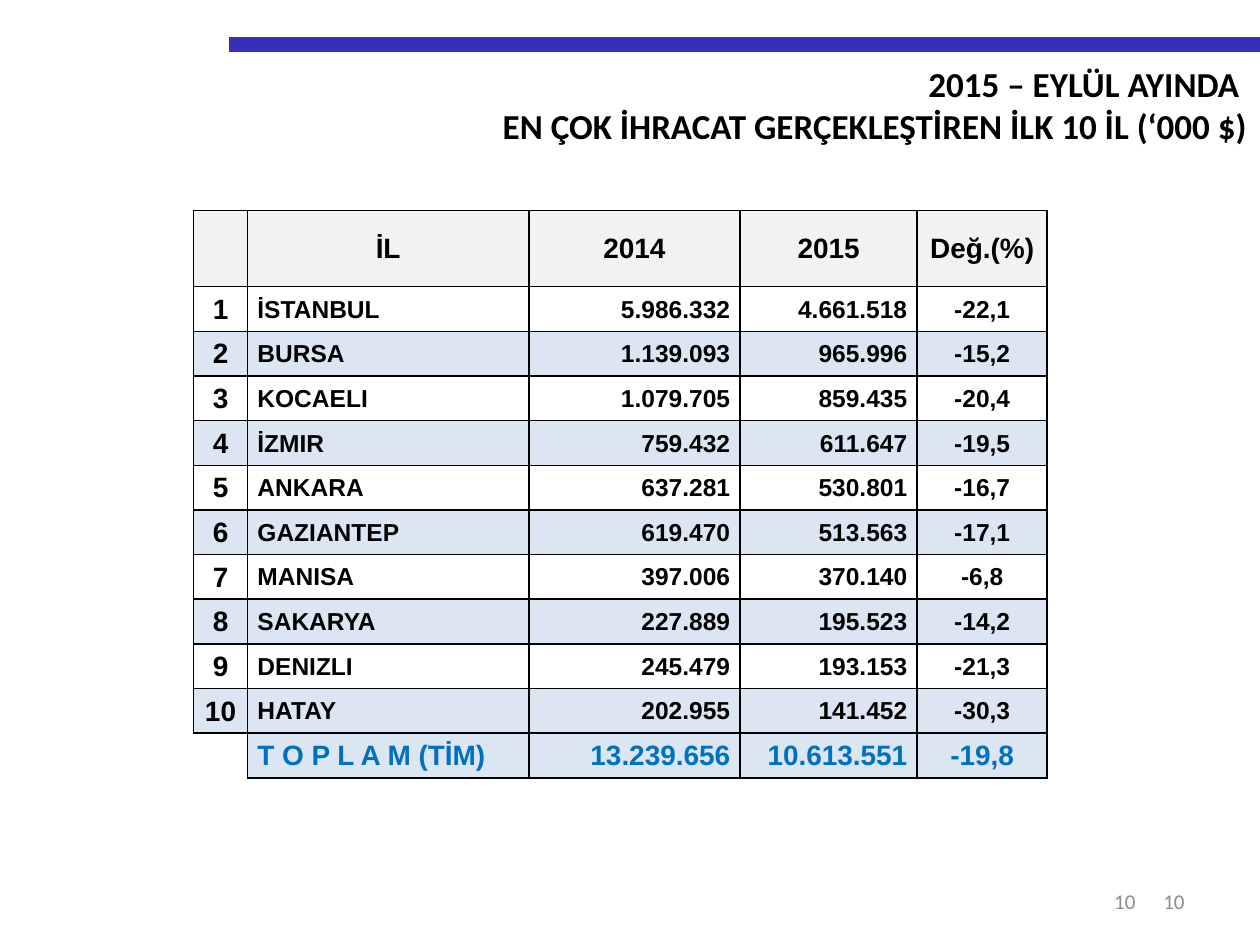
from dataclasses import dataclass

from lxml import etree
from pptx import Presentation
from pptx.dml import color
from pptx.enum import shapes, text
from pptx.oxml import ns
from pptx.util import Cm, Pt


@dataclass(frozen=True)
class Theme:
    black: str = "000000"
    grey: str = "8C8C8C"
    bar: str = "382EB8"
    header: str = "F2F2F2"
    band: str = "DCE6F2"
    total: str = "0070C0"
    heading_font: str = "Calibri"
    table_font: str = "Arial"
    title_size: float = 20
    large_size: float = 16
    body_size: float = 14
    number_size: float = 12
    bar_width: float = 8.5
    border_width: float = 1


THEME = Theme()
LEFT, CENTER, RIGHT = text.PP_ALIGN.LEFT, text.PP_ALIGN.CENTER, text.PP_ALIGN.RIGHT
MIDDLE = text.MSO_ANCHOR.MIDDLE

TITLE = ["2015 – EYLÜL AYINDA ", "EN ÇOK İHRACAT GERÇEKLEŞTİREN İLK 10 İL (‘000 $)"]
HEADINGS = ["", "İL", "2014", "2015", "Değ.(%)"]
PROVINCES = [
    ["İSTANBUL", "5.986.332", "4.661.518", "-22,1"],
    ["BURSA", "1.139.093", "965.996", "-15,2"],
    ["KOCAELI", "1.079.705", "859.435", "-20,4"],
    ["İZMIR", "759.432", "611.647", "-19,5"],
    ["ANKARA", "637.281", "530.801", "-16,7"],
    ["GAZIANTEP", "619.470", "513.563", "-17,1"],
    ["MANISA", "397.006", "370.140", "-6,8"],
    ["SAKARYA", "227.889", "195.523", "-14,2"],
    ["DENIZLI", "245.479", "193.153", "-21,3"],
    ["HATAY", "202.955", "141.452", "-30,3"],
]
TOTAL = ["", "T O P L A M (TİM)", "13.239.656", "10.613.551", "-19,8"]

COLUMN_WIDTHS = [1.09, 5.67, 4.26, 3.57, 2.62]
COLUMN_ALIGNMENTS = [CENTER, LEFT, RIGHT, RIGHT, CENTER]
COLUMN_MARGINS = [(0, 0), (0.2, 0.02), (0.02, 0.2), (0.02, 0.2), (0.02, 0.02)]
HEADER_HEIGHT, ROW_HEIGHT = 1.54, 0.9


def rgb(value):
    return color.RGBColor.from_string(value)


def format_paragraph(paragraph, alignment, name, size, value, bold=False):
    paragraph.alignment = alignment
    font = paragraph.font
    font.name, font.size, font.bold = name, Pt(size), bold
    font.color.rgb = rgb(value)


def add_bar(slide, left, top, width):
    bar = slide.shapes.add_connector(
        shapes.MSO_CONNECTOR.STRAIGHT, Cm(left), Cm(top), Cm(left + width), Cm(top))
    bar.line.color.rgb = rgb(THEME.bar)
    bar.line.width = Pt(THEME.bar_width)
    etree.SubElement(bar._element.spPr, ns.qn("a:effectLst"))


def place_title(slide, left, top, width, height):
    title = slide.shapes.title
    title.left, title.top, title.width, title.height = map(Cm, (left, top, width, height))
    frame = title.text_frame
    frame.text = "\n".join(TITLE)
    frame.word_wrap = True
    frame.auto_size = text.MSO_AUTO_SIZE.NONE
    frame.vertical_anchor = text.MSO_ANCHOR.TOP
    for paragraph in frame.paragraphs:
        format_paragraph(paragraph, RIGHT, THEME.heading_font,
                         THEME.title_size, THEME.black, True)


def add_page_number(slide, left, top, width, height):
    frame = slide.shapes.add_textbox(*map(Cm, (left, top, width, height))).text_frame
    frame.text = "10"
    frame.word_wrap = True
    frame.vertical_anchor = MIDDLE
    format_paragraph(frame.paragraphs[0], RIGHT, THEME.heading_font,
                     THEME.number_size, THEME.grey)


def set_borders(cell, visible):
    properties = cell._tc.get_or_add_tcPr()
    for side in "LRTB":
        line = etree.SubElement(properties, ns.qn(f"a:ln{side}"), w=str(Pt(THEME.border_width)))
        if side in visible:
            fill = etree.SubElement(line, ns.qn("a:solidFill"))
            etree.SubElement(fill, ns.qn("a:srgbClr"), val=THEME.black)
        else:
            etree.SubElement(line, ns.qn("a:noFill"))


def format_cell(cell, content, column, fill, size, value, header):
    set_borders(cell, "LRTB" if content or header else "RT")
    if fill:
        cell.fill.solid()
        cell.fill.fore_color.rgb = rgb(fill)
    else:
        cell.fill.background()
    cell.text = content
    cell.vertical_anchor = MIDDLE
    left, right = (0.25, 0.25) if header else COLUMN_MARGINS[column]
    cell.margin_left, cell.margin_right = Cm(left), Cm(right)
    cell.margin_top, cell.margin_bottom = (Cm(0.13), Cm(0.13)) if header else (Cm(0.02), 0)
    alignment = CENTER if header else COLUMN_ALIGNMENTS[column]
    format_paragraph(cell.text_frame.paragraphs[0], alignment,
                     THEME.table_font, size, value, True)


def add_export_table(slide, left, top):
    ranked = [[str(rank), *province] for rank, province in enumerate(PROVINCES, 1)]
    rows = [HEADINGS, *ranked, TOTAL]
    heights = [HEADER_HEIGHT] + [ROW_HEIGHT] * (len(rows) - 1)
    table = slide.shapes.add_table(
        len(rows), len(HEADINGS), Cm(left), Cm(top),
        Cm(sum(COLUMN_WIDTHS)), Cm(sum(heights))).table
    for column, width in zip(table.columns, COLUMN_WIDTHS):
        column.width = Cm(width)
    for index, contents in enumerate(rows):
        table.rows[index].height = Cm(heights[index])
        header, total = index == 0, index == len(rows) - 1
        for column, content in enumerate(contents):
            if header:
                fill = THEME.header
            elif content and (total or index % 2 == 0):
                fill = THEME.band
            else:
                fill = None
            large = header or total or column == 0
            format_cell(table.cell(index, column), content, column, fill,
                        THEME.large_size if large else THEME.body_size,
                        THEME.total if total else THEME.black, header)


def build_slide(presentation):
    slide = presentation.slides.add_slide(presentation.slide_layouts[5])
    add_bar(slide, 4.62, 0.9, 20.78)
    place_title(slide, 2.69, 1.14, 22.71, 1.96)
    add_export_table(slide, 3.9, 4.24)
    for left, width in ((18.21, 5.92), (17.81, 5.33)):
        add_page_number(slide, left, 17.65, width, 1.02)


def main():
    presentation = Presentation()
    presentation.slide_width, presentation.slide_height = Cm(25.4), Cm(19.05)
    build_slide(presentation)
    presentation.save("out.pptx")


if __name__ == "__main__":
    main()
